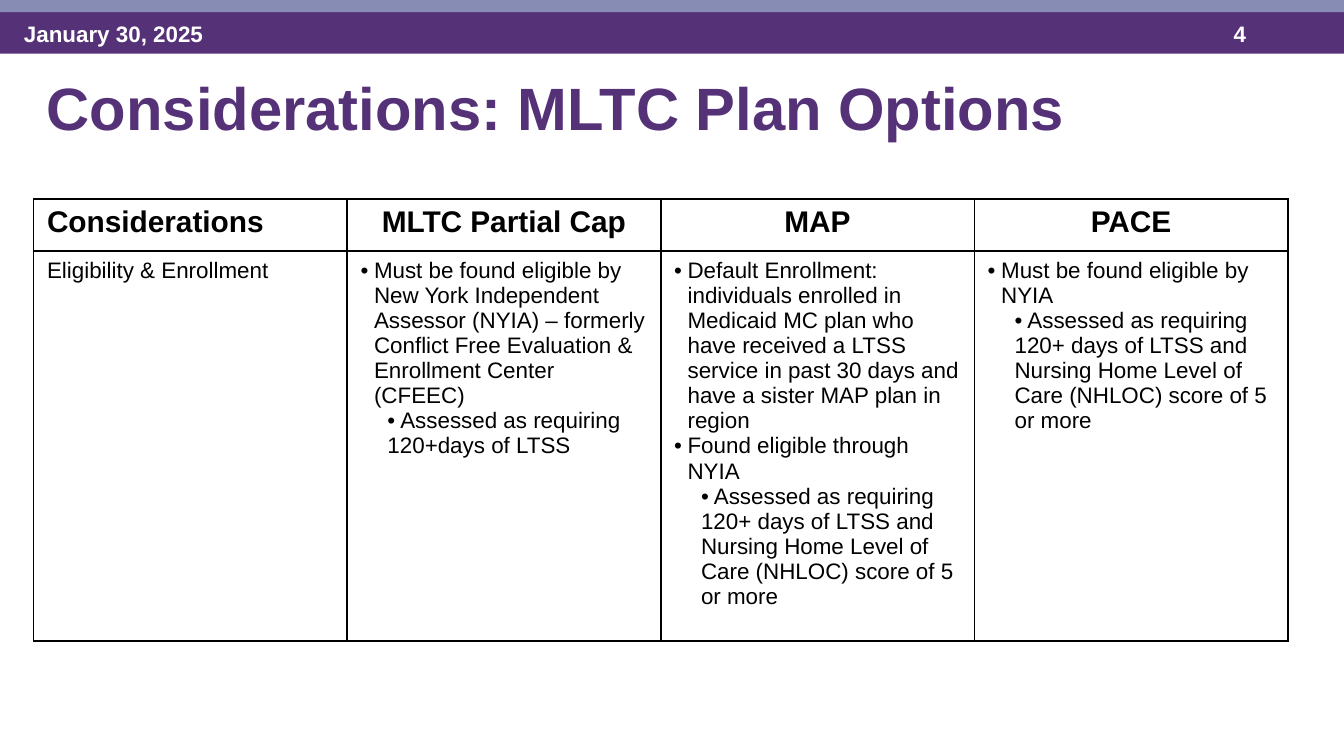
from lxml.etree import SubElement
from pptx import Presentation
from pptx.dml.color import RGBColor
from pptx.enum.shapes import MSO_SHAPE as Shape
from pptx.enum.text import PP_ALIGN as Align
from pptx.oxml.ns import qn
from pptx.util import Inches, Pt

WIDTH = 10
HEIGHT = WIDTH * 9 / 16
PURPLE, LAVENDER, WHITE, BLACK = "553278", "878CB4", "FFFFFF", "000000"
MARGIN = WIDTH / 40
COLUMN = WIDTH * 7 / 30
HEADER_ROW, BODY_ROW = 0.39, 2.9

NURSING_HOME_LEVEL = (
    "• Assessed as requiring 120+ days of LTSS and "
    "Nursing Home Level of Care (NHLOC) score of 5 or more"
)
HEADINGS = ["Considerations", "MLTC Partial Cap", "MAP", "PACE"]
TOPIC = "Eligibility & Enrollment"
PLAN_RULES = [
    [
        ("bullet", "Must be found eligible by New York Independent Assessor (NYIA) – "
                   "formerly Conflict Free Evaluation & Enrollment Center (CFEEC)"),
        ("detail", "• Assessed as requiring 120+days of LTSS"),
    ],
    [
        ("bullet", "Default Enrollment: individuals enrolled in Medicaid MC plan who have "
                   "received a LTSS service in past 30 days and have a sister MAP plan in region"),
        ("bullet", "Found eligible through NYIA"),
        ("detail", NURSING_HOME_LEVEL),
    ],
    [
        ("bullet", "Must be found eligible by NYIA"),
        ("detail", NURSING_HOME_LEVEL),
    ],
]


def color(hex_value):
    return RGBColor.from_string(hex_value)


def add_run(paragraph, words, size, hex_value, bold=False):
    run = paragraph.add_run()
    run.text = words
    run.font.name = "Arial"
    run.font.size = Pt(size)
    run.font.bold = bold
    run.font.color.rgb = color(hex_value)


def add_band(slide, top, height, hex_value):
    band = slide.shapes.add_shape(
        Shape.RECTANGLE, 0, Inches(top), Inches(WIDTH), Inches(height))
    band.shadow.inherit = False
    band.fill.solid()
    band.fill.fore_color.rgb = color(hex_value)
    band.line.fill.background()


def add_label(slide, box, words, size, hex_value):
    frame = slide.shapes.add_textbox(*map(Inches, box)).text_frame
    frame.word_wrap = True
    add_run(frame.paragraphs[0], words, size, hex_value, bold=True)


def indent(paragraph, kind):
    left, first = {"plain": (0, 0), "bullet": (0.1, -0.1), "detail": (0.2, 0)}[kind]
    properties = paragraph._p.get_or_add_pPr()
    properties.set("marL", str(Inches(left)))
    properties.set("indent", str(Inches(first)))
    if kind == "bullet":
        SubElement(properties, qn("a:buFont"), typeface="Arial")
        SubElement(properties, qn("a:buChar"), char="•")
    else:
        SubElement(properties, qn("a:buNone"))


def frame_cell(cell):
    properties = cell._tc.get_or_add_tcPr()
    for side in ("lnL", "lnR", "lnT", "lnB"):
        border = SubElement(properties, qn(f"a:{side}"), w=str(Pt(1)))
        SubElement(SubElement(border, qn("a:solidFill")), qn("a:srgbClr"), val=BLACK)
    cell.fill.solid()
    cell.fill.fore_color.rgb = color(WHITE)


def fill_cell(cell, entries, size, bold=False, align=Align.LEFT):
    frame_cell(cell)
    frame = cell.text_frame
    for position, (kind, words) in enumerate(entries):
        paragraph = frame.add_paragraph() if position else frame.paragraphs[0]
        indent(paragraph, kind)
        paragraph.alignment = align
        add_run(paragraph, words, size, BLACK, bold)


def add_comparison(slide):
    box = (MARGIN, 1.48, COLUMN * len(HEADINGS), HEADER_ROW + BODY_ROW)
    comparison = slide.shapes.add_table(2, len(HEADINGS), *map(Inches, box)).table
    comparison.first_row = comparison.horz_banding = False
    for row, height in zip(comparison.rows, (HEADER_ROW, BODY_ROW)):
        row.height = Inches(height)
    rules = [[("plain", TOPIC)], *PLAN_RULES]
    for column, (heading, entries) in enumerate(zip(HEADINGS, rules)):
        comparison.columns[column].width = Inches(COLUMN)
        align = Align.CENTER if column else Align.LEFT
        fill_cell(comparison.cell(0, column), [("plain", heading)], 16, True, align)
        fill_cell(comparison.cell(1, column), entries, 12)


def main():
    deck = Presentation()
    deck.slide_width, deck.slide_height = Inches(WIDTH), Inches(HEIGHT)
    slide = deck.slides.add_slide(deck.slide_layouts[6])
    add_band(slide, 0.07, 0.33, PURPLE)
    add_label(slide, (9.08, 0.1, 0.75, 0.3), "4", 12, WHITE)
    add_band(slide, 0, 0.09, LAVENDER)
    add_label(slide, (0.08, 0.1, 2.33, 0.3), "January 30, 2025", 12, WHITE)
    add_label(slide, (MARGIN, 0.48, 9.17, 0.83), "Considerations: MLTC Plan Options", 32, PURPLE)
    add_comparison(slide)
    deck.save("out.pptx")


if __name__ == "__main__":
    main()
